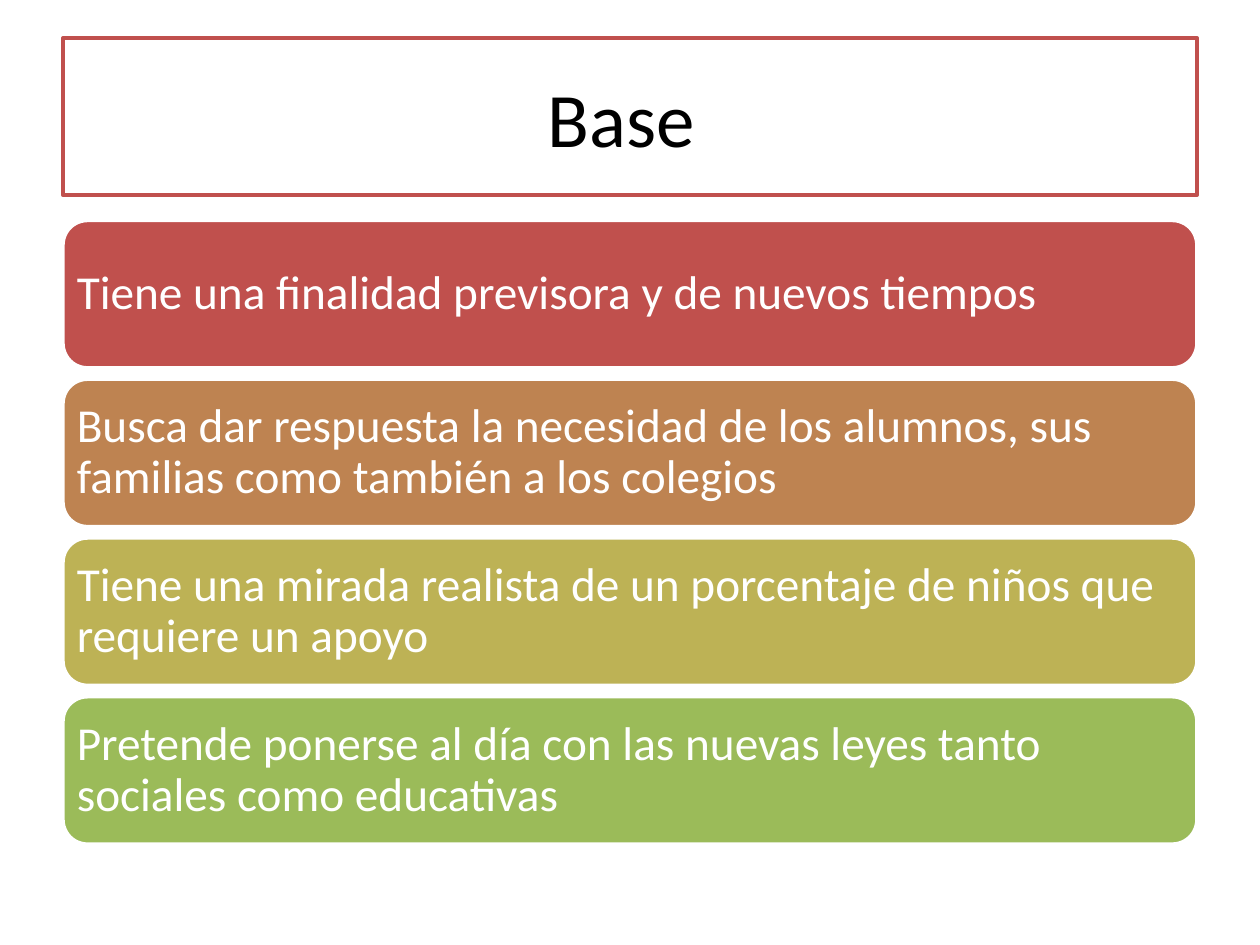
from dataclasses import dataclass

from pptx import Presentation
from pptx import util as u
from pptx.dml.color import RGBColor
from pptx.enum import shapes, text

LEFT, WIDTH = 36, 648
BAR_TOP, BAR_HEIGHT, BAR_PITCH = 126, 84.24, 90.72
WHITE, RED, BLACK = "FFFFFF", "C0504D", "000000"


@dataclass
class Bar:
    wording: str
    fill: str


BARS = [
    Bar("Tiene una finalidad previsora y de nuevos tiempos", RED),
    Bar("Busca dar respuesta la necesidad de los alumnos, sus familias como también a los colegios", "BE8351"),
    Bar("Tiene una mirada realista de un porcentaje de niños que requiere un apoyo", "BDB255"),
    Bar("Pretende ponerse al día con las nuevas leyes tanto sociales como educativas", "9BBB59"),
]


def paint(color_format, value: str) -> None:
    color_format.rgb = RGBColor.from_string(value)


def add_box(page, kind, top: float, height: float, fill: str, line: str):
    box = page.shapes.add_shape(kind, u.Pt(LEFT), u.Pt(top), u.Pt(WIDTH), u.Pt(height))
    box.shadow.inherit = False
    box.fill.solid()
    paint(box.fill.fore_color, fill)
    paint(box.line.color, line)
    box.line.width = u.Pt(2)
    return box


def write(box, wording: str, *, size: float, color: str, align,
          spacing: float = 1.0, inset: float = 7.2) -> None:
    frame = box.text_frame
    frame.word_wrap = True
    frame.vertical_anchor = text.MSO_ANCHOR.MIDDLE
    frame.margin_left = frame.margin_right = u.Pt(inset)
    frame.margin_top = frame.margin_bottom = u.Pt(inset / 2)
    para = frame.paragraphs[0]
    para.alignment = align
    para.line_spacing = spacing
    span = para.add_run()
    span.text = wording
    span.font.name = "Calibri"
    span.font.size = u.Pt(size)
    paint(span.font.color, color)


def add_bar(page, bar: Bar, top: float) -> None:
    box = add_box(page, shapes.MSO_SHAPE.ROUNDED_RECTANGLE, top, BAR_HEIGHT, bar.fill, WHITE)
    write(box, bar.wording, size=27, color=WHITE, align=text.PP_ALIGN.LEFT,
          spacing=0.9, inset=3.8)


def main() -> None:
    deck = Presentation()
    deck.slide_width, deck.slide_height = u.Pt(720), u.Pt(540)
    page = deck.slides.add_slide(deck.slide_layouts[6])
    for index, bar in enumerate(BARS):
        add_bar(page, bar, BAR_TOP + index * BAR_PITCH)
    title = add_box(page, shapes.MSO_SHAPE.RECTANGLE, 21.6, 90, WHITE, RED)
    write(title, "Base ", size=44, color=BLACK, align=text.PP_ALIGN.CENTER)
    deck.save("out.pptx")


if __name__ == "__main__":
    main()
